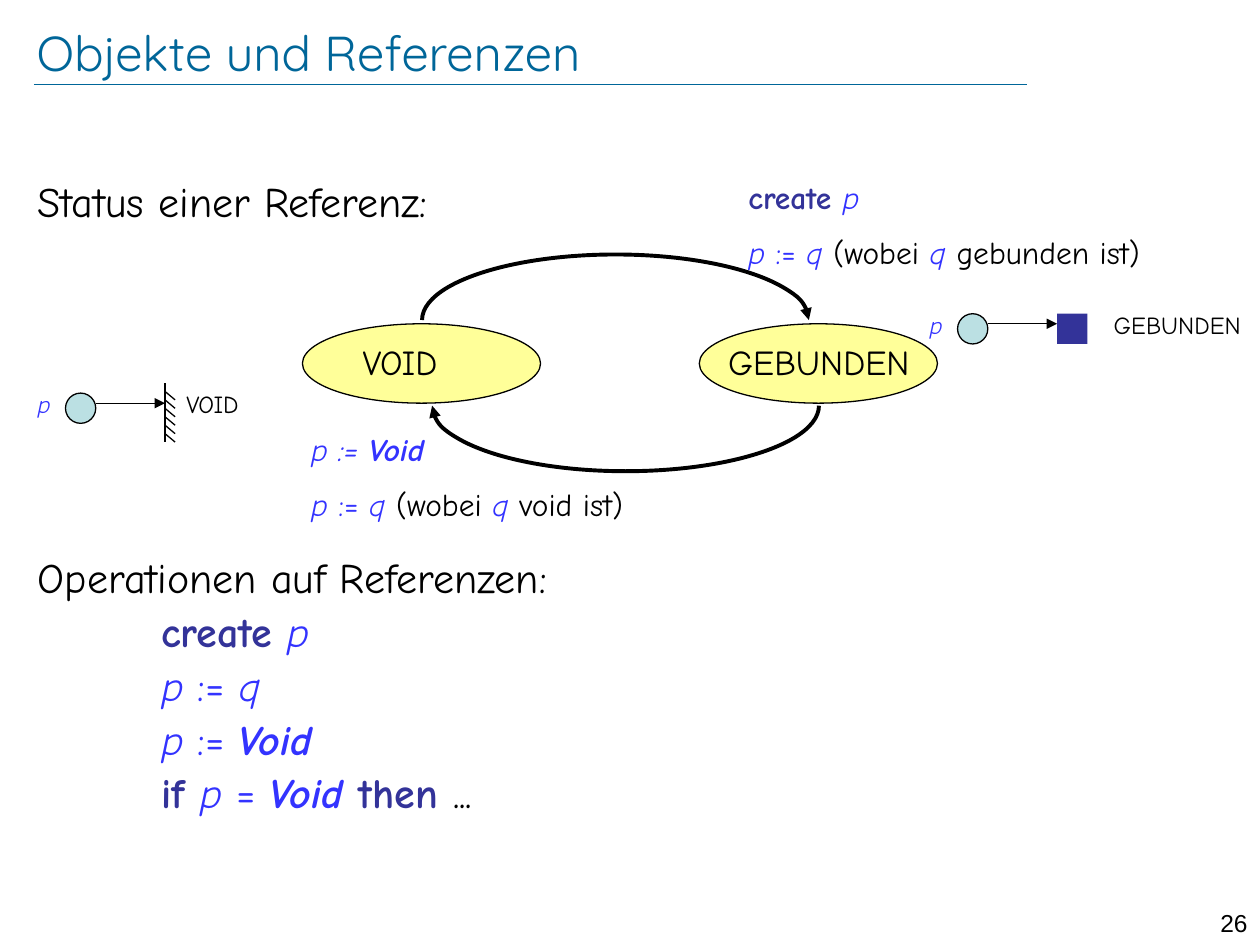
from lxml.etree import SubElement
from pptx import Presentation
from pptx.dml.color import RGBColor
from pptx.enum.shapes import MSO_CONNECTOR, MSO_SHAPE as SHAPE
from pptx.enum.text import MSO_ANCHOR, MSO_AUTO_SIZE, PP_ALIGN as ALIGN
from pptx.oxml.ns import qn
from pptx.util import Inches, Pt

BLACK, TEAL, NAVY, BLUE = "000000", "006699", "333399", "3333FF"
YELLOW, PALE = "FFFF99", "BBE0E3"
HAND = "Comic Neue"

STYLES = {  # colour, bold, italic
    "text": (BLACK, False, False),
    "title": (TEAL, False, False),
    "keyword": (NAVY, True, False),
    "name": (BLUE, False, True),
    "sign": (BLUE, False, False),
    "void": (BLUE, True, True),
}
P, Q, ASSIGN = ("p", "name"), ("q", "name"), (" := ", "sign")
CREATE = [("create ", "keyword"), P]
WHERE = [P, ASSIGN, ("q ", "name"), ("(wobei ", "text")]

TITLE = [[("Objekte und Referenzen", "title")]]
HEADINGS = ["Status einer Referenz:", "Operationen auf Referenzen:"]
OPERATIONS = [
    CREATE,
    [P, ASSIGN, Q],
    [P, ASSIGN, ("Void", "void")],
    [("if ", "keyword"), P, (" = ", "sign"), ("Void ", "void"),
     ("then ", "keyword"), ("...", "text")],
]
STATES = [("VOID", 2.4, 2.78, 1.49), ("GEBUNDEN", 5.55, 5.68, 1.81)]
TRANSITIONS = [
    (5.84, 1.36, [CREATE, WHERE + [("q ", "name"), ("gebunden ist)", "text")]]),
    (2.37, 3.36, [[("p := ", "name"), ("Void", "void")],
                  WHERE + [Q, (" void ist)", "text")]]),
]
ARCS = [(3.35, 2.02, 108, 0), (3.43, 2.7, 0, 108)]
REFERENCES = [("GEBUNDEN", 7.28, 2.41, 8.74), ("VOID", 0.2, 3.04, 1.38)]
HATCHES, HATCH_STEP = 6, 0.067


def rgb(value):
    return RGBColor.from_string(value)


def place(part, left, top, width, height):
    part.left, part.top, part.width, part.height = map(
        Inches, (left, top, width, height))
    return part


def write(frame, paragraphs, size, font=HAND, before=0, inset=None,
          align=ALIGN.LEFT, anchor=MSO_ANCHOR.TOP):
    """Fill a text frame with paragraphs made of (text, style) runs."""
    frame.word_wrap, frame.auto_size = True, MSO_AUTO_SIZE.NONE
    frame.vertical_anchor = anchor
    if inset is not None:
        frame.margin_left = frame.margin_right = Inches(inset)
        frame.margin_top = frame.margin_bottom = Inches(inset)
    for index, runs in enumerate(paragraphs):
        line = frame.add_paragraph() if index else frame.paragraphs[0]
        line.alignment = align
        line.space_before = Pt(before if index else 0)
        for words, style in runs:
            run = line.add_run()
            run.text = words
            color, run.font.bold, run.font.italic = STYLES[style]
            run.font.color.rgb = rgb(color)
            run.font.size, run.font.name = Pt(size), font


def label(slide, box, paragraphs, size, **style):
    write(slide.shapes.add_textbox(*map(Inches, box)).text_frame,
          paragraphs, size, **style)


def draw(slide, kind, box, fill=None, line=BLACK, weight=0.75):
    figure = slide.shapes.add_shape(kind, *map(Inches, box))
    figure.shadow.inherit = False
    if fill:
        figure.fill.solid()
        figure.fill.fore_color.rgb = rgb(fill)
    else:
        figure.fill.background()
    if line:
        figure.line.color.rgb = rgb(line)
        figure.line.width = Pt(weight)
    else:
        figure.line.fill.background()
    return figure


def point(part):
    SubElement(part.line._get_or_add_ln(), qn("a:tailEnd"), type="triangle")


def connect(slide, x1, y1, x2, y2, color=BLACK, weight=0.75):
    rule = slide.shapes.add_connector(
        MSO_CONNECTOR.STRAIGHT, *map(Inches, (x1, y1, x2, y2)))
    rule.line.color.rgb, rule.line.width = rgb(color), Pt(weight)
    SubElement(rule._element.spPr, qn("a:effectLst"))
    return rule


def add_body(slide):
    body = place(slide.placeholders[1], 0.2, 1.39, 9.53, 5.59).text_frame
    headings = [[(heading, "text")] for heading in HEADINGS]
    write(body, headings + OPERATIONS, 24, before=4.8)
    for index, line in enumerate(body.paragraphs):
        line.line_spacing = 0.9
        operation = index >= len(HEADINGS)
        line.level = int(operation)
        props = line._p.get_or_add_pPr()
        props.set("marL", str(Inches(0.98 if operation else 0)))
        props.set("indent", "0")
        SubElement(props, qn("a:buNone"))
    body.paragraphs[1].space_before = Pt(189)


def add_states(slide):
    for state, left, label_left, width in STATES:
        draw(slide, SHAPE.OVAL, (left, 2.57, 1.89, 0.63), YELLOW)
        label(slide, (label_left, 2.65, width, 0.44), [[(state, "text")]], 20)
    for left, top, start, end in ARCS:
        arc = draw(slide, SHAPE.ARC, (left, top, 3.07, 1.04), weight=2.25)
        arc.adjustments[0], arc.adjustments[1] = start, end
        point(arc)
    for left, top, lines in TRANSITIONS:
        label(slide, (left, top, 4.02, 0.85), lines, 18, before=10)


def add_references(slide):
    for state, left, top, label_left in REFERENCES:
        circle, axis = left + 0.32, top + 0.16
        target = circle + 0.79
        draw(slide, SHAPE.OVAL, (circle, top + 0.08, 0.24, 0.24), PALE)
        point(connect(slide, circle + 0.24, axis, target, axis))
        label(slide, (left, top, 0.32, 0.34), [[P]], 14)
        label(slide, (label_left, top, 1.42, 0.34), [[(state, "text")]], 14)
        if state == "GEBUNDEN":
            draw(slide, SHAPE.RECTANGLE, (target, top + 0.08, 0.24, 0.24),
                 NAVY, line=None)
            continue
        connect(slide, target, top, target, top + 0.47)
        for step in range(HATCHES):
            y = top + (step + 1) * HATCH_STEP
            connect(slide, target, y, target + 0.08, y + HATCH_STEP)


def main():
    deck = Presentation()
    deck.slide_width, deck.slide_height = Inches(10), Inches(7.5)
    slide = deck.slides.add_slide(deck.slide_layouts[1])
    connect(slide, 0.27, 0.67, 8.15, 0.67, TEAL, 0.25)
    label(slide, (9.45, 7.16, 0.55, 0.24), [[("26", "text")]], 14,
          font="Arial", align=ALIGN.RIGHT)
    write(place(slide.shapes.title, 0.29, 0.18, 8.97, 0.46).text_frame,
          TITLE, 28, font="Quicksand", inset=0, anchor=MSO_ANCHOR.MIDDLE)
    add_body(slide)
    add_states(slide)
    add_references(slide)
    deck.save("out.pptx")


if __name__ == "__main__":
    main()
